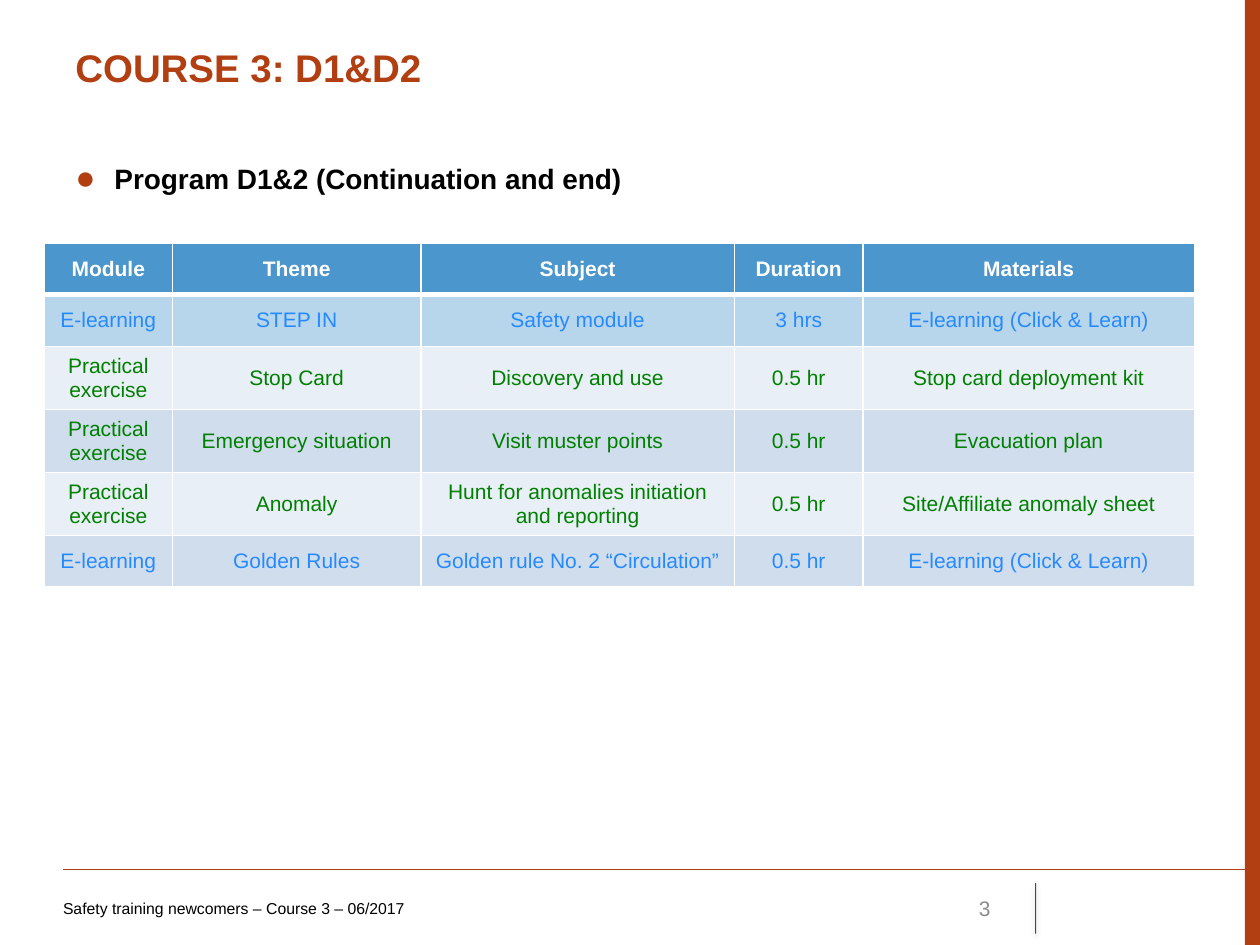
from dataclasses import dataclass

from pptx import Presentation
from pptx.dml.color import RGBColor
from pptx.enum.shapes import MSO_CONNECTOR, MSO_SHAPE
from pptx.enum.text import MSO_ANCHOR, PP_ALIGN
from pptx.oxml import parse_xml
from pptx.oxml.ns import nsdecls
from pptx.util import Inches, Pt


@dataclass(frozen=True)
class Theme:
    font: str = "Arial"
    accent: str = "B23F12"
    black: str = "000000"
    white: str = "FFFFFF"
    grey: str = "8C8C8C"
    header: str = "4A96CD"
    first_row: str = "B7D5EB"
    bands: tuple = ("D0DDED", "E9EFF6")
    online: str = "268AFF"
    practice: str = "008000"
    title_size: int = 22
    body_size: int = 16
    table_size: int = 12
    footer_size: int = 9


THEME = Theme()

COLUMNS = [1.02, 1.97, 2.49, 1.02, 2.63]
ROW_HEIGHT = 0.41
PROGRAM = [
    ("Module", "Theme", "Subject", "Duration", "Materials"),
    ("E-learning", "STEP IN", "Safety module", "3 hrs", "E-learning (Click & Learn)"),
    ("Practical exercise", "Stop Card", "Discovery and use", "0.5 hr",
     "Stop card deployment kit"),
    ("Practical exercise", "Emergency situation", "Visit muster points", "0.5 hr",
     "Evacuation plan"),
    ("Practical exercise", "Anomaly", "Hunt for anomalies initiation and reporting",
     "0.5 hr", "Site/Affiliate anomaly sheet"),
    ("E-learning", "Golden Rules", "Golden rule No. 2 “Circulation”", "0.5 hr",
     "E-learning (Click & Learn)"),
]


def set_all(target, values):
    for name, value in values.items():
        setattr(target, name, value)


def write(para, text, size, color, bold=False, align=PP_ALIGN.LEFT):
    para.alignment = align
    span = para.add_run()
    span.text = text
    set_all(span.font, {"name": THEME.font, "size": Pt(size), "bold": bold})
    span.font.color.rgb = RGBColor.from_string(color)


def add_text(page, place, text, size, color, bold=False, align=PP_ALIGN.LEFT,
             anchor=MSO_ANCHOR.TOP, left_inset=0.1):
    box = page.shapes.add_textbox(*map(Inches, place))
    set_all(box.text_frame, {"word_wrap": True, "vertical_anchor": anchor,
                             "margin_left": Inches(left_inset)})
    para = box.text_frame.paragraphs[0]
    write(para, text, size, color, bold, align)
    return para


def add_bullet(para):
    properties = para._p.get_or_add_pPr()
    properties.set("marL", str(Inches(0.31)))
    properties.set("indent", str(-Inches(0.31)))
    for xml in (f'<a:buClr {nsdecls("a")}><a:srgbClr val="{THEME.accent}"/></a:buClr>',
                f'<a:buSzPct {nsdecls("a")} val="120000"/>',
                f'<a:buFont {nsdecls("a")} typeface="{THEME.font}"/>',
                f'<a:buChar {nsdecls("a")} char="●"/>'):
        properties.append(parse_xml(xml))


def add_line(page, ends, color, width, effect=""):
    line = page.shapes.add_connector(MSO_CONNECTOR.STRAIGHT, *map(Inches, ends))
    line.line.color.rgb = RGBColor.from_string(color)
    line.line.width = Pt(width)
    line._element.spPr.append(
        parse_xml(f'<a:effectLst {nsdecls("a")}>{effect}</a:effectLst>'))
    return line


def add_divider(page):
    shadow = ('<a:outerShdw blurRad="40000" dist="20000" dir="5400000" rotWithShape="0">'
              f'<a:srgbClr val="{THEME.black}"><a:alpha val="38000"/></a:srgbClr>'
              '</a:outerShdw>')
    line = add_line(page, (8.22, 7.01, 8.22, 7.41), THEME.black, 0.5, shadow)
    color = line._element.spPr.find(".//{*}ln//{*}srgbClr")
    color.append(parse_xml(f'<a:alpha {nsdecls("a")} val="70000"/>'))


def add_borders(cell, top, bottom):
    properties = cell._tc.get_or_add_tcPr()
    for side, width in (("L", 1), ("R", 1), ("T", top), ("B", bottom)):
        properties.append(parse_xml(
            f'<a:ln{side} {nsdecls("a")} w="{Pt(width)}"><a:solidFill>'
            f'<a:srgbClr val="{THEME.white}"/></a:solidFill></a:ln{side}>'))


def row_colors(index, module):
    """Return the fill and text colours of a table row."""
    if index == 0:
        return THEME.header, THEME.white
    fill = THEME.first_row if index == 1 else THEME.bands[(index + 1) % 2]
    return fill, THEME.online if module == "E-learning" else THEME.practice


def add_program(page):
    frame = page.shapes.add_table(
        len(PROGRAM), len(COLUMNS), Inches(0.35), Inches(1.93),
        Inches(sum(COLUMNS)), Inches(ROW_HEIGHT * len(PROGRAM)))
    table = frame.table
    for column, width in zip(table.columns, COLUMNS):
        column.width = Inches(width)
    for index, texts in enumerate(PROGRAM):
        fill, color = row_colors(index, texts[0])
        for cell, text in zip(table.rows[index].cells, texts):
            add_borders(cell, top=3 if index == 1 else 1, bottom=3 if index == 0 else 1)
            cell.fill.solid()
            cell.fill.fore_color.rgb = RGBColor.from_string(fill)
            cell.vertical_anchor = MSO_ANCHOR.MIDDLE
            write(cell.text_frame.paragraphs[0], text, THEME.table_size, color,
                  bold=index == 0, align=PP_ALIGN.CENTER)


def add_side_band(page):
    band = page.shapes.add_shape(MSO_SHAPE.RECTANGLE,
                                 *map(Inches, (9.88, 0, 0.12, 7.5)))
    band.shadow.inherit = False
    band.fill.solid()
    band.fill.fore_color.rgb = RGBColor.from_string(THEME.accent)
    band.line.fill.background()


def main():
    deck = Presentation()
    set_all(deck, {"slide_width": Inches(10), "slide_height": Inches(7.5)})
    page = deck.slides.add_slide(deck.slide_layouts[6])

    # Frame of the page
    add_side_band(page)
    add_line(page, (0.5, 6.9, 10, 6.9), THEME.accent, 0.75)
    add_divider(page)

    # Title and heading
    add_text(page, (0.5, 0.3, 8.99, 0.69), "COURSE 3: D1&D2",
             THEME.title_size, THEME.accent, bold=True)
    heading = add_text(page, (0.5, 1.23, 8.99, 0.47),
                       "Program D1&2 (Continuation and end)",
                       THEME.body_size, THEME.black, bold=True)
    add_bullet(heading)

    # Course program
    add_program(page)

    # Footer
    add_text(page, (7.17, 7.01, 0.79, 0.4), "3", THEME.table_size, THEME.grey,
             align=PP_ALIGN.RIGHT, anchor=MSO_ANCHOR.MIDDLE)
    add_text(page, (0.5, 7.01, 6.08, 0.4),
             "Safety training newcomers – Course 3 – 06/2017", THEME.footer_size,
             THEME.black, anchor=MSO_ANCHOR.MIDDLE, left_inset=0)

    deck.save("out.pptx")


if __name__ == "__main__":
    main()
